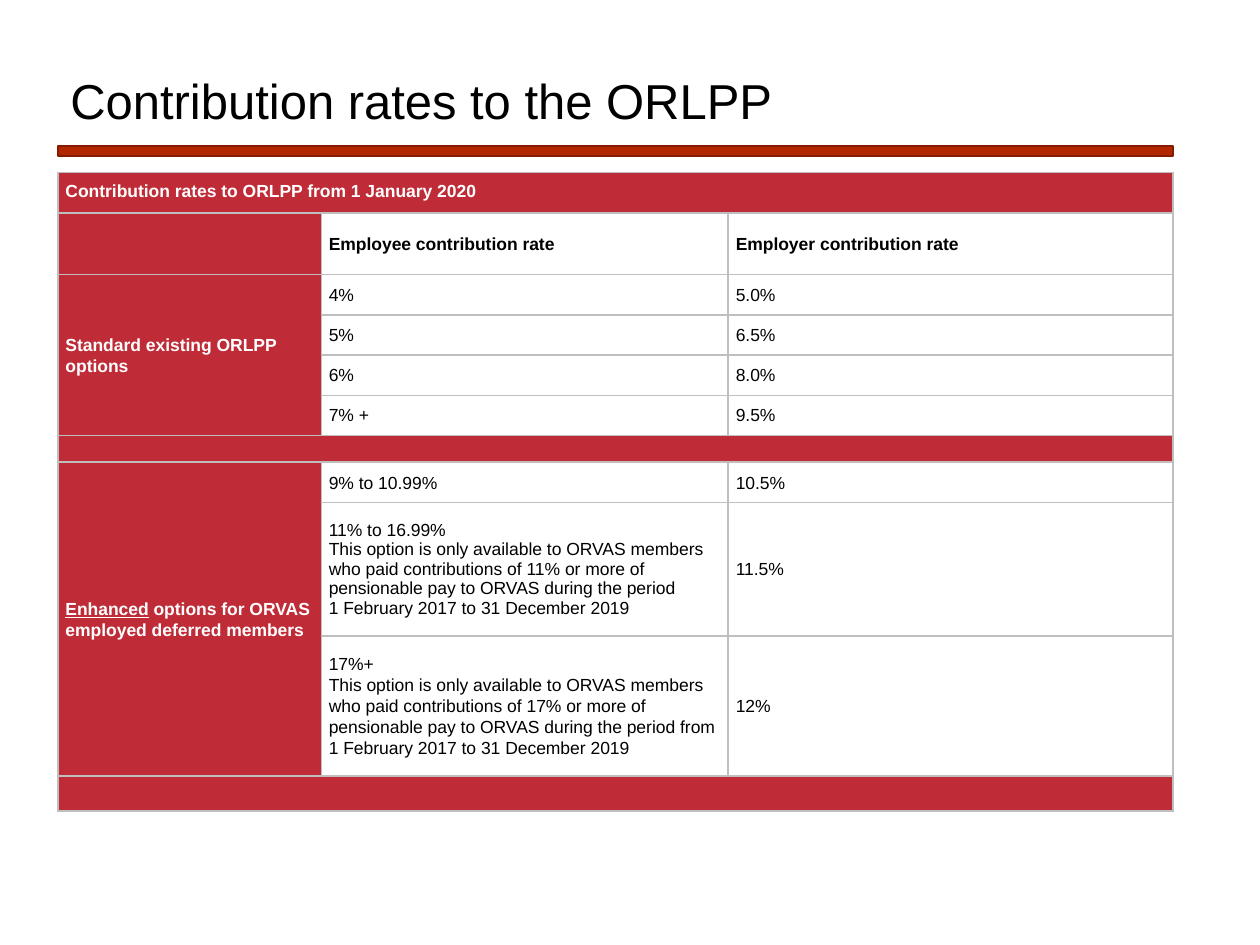
from lxml.etree import SubElement
from pptx import Presentation
from pptx.dml.color import RGBColor
from pptx.enum.shapes import MSO_SHAPE
from pptx.enum.text import MSO_ANCHOR
from pptx.oxml import parse_xml
from pptx.oxml.ns import nsdecls, qn
from pptx.util import Inches, Pt

RED, WHITE, BLACK, GREY = "BF2C37", "FFFFFF", "000000", "BFBFBF"
LEFT, WIDTH = 0.46, 8.85
COLUMNS = [2.09, 3.23, 3.53]
ROWS = [0.32, 0.49] + [0.32] * 4 + [0.21, 0.32, 1.06, 1.11, 0.28]
MERGES = [(0, 0, 0, 2), (2, 0, 5, 0), (6, 0, 6, 2), (7, 0, 9, 0), (10, 0, 10, 2)]
RED_ROWS = (0, 6, 10)
SINGLE_SPACED_ROWS = (3, 4, 5, 8)

HEADINGS = {
    (0, 0): ["Contribution rates to ORLPP from 1 January 2020"],
    (2, 0): ["Standard existing ORLPP options"],
    (7, 0): ["Enhanced", " options for ORVAS employed deferred members"],
}
RATES = {
    1: ("Employee contribution rate", "Employer contribution rate"),
    2: ("4%", "5.0%"),
    3: ("5%", "6.5%"),
    4: ("6%", "8.0%"),
    5: ("7% +", "9.5%"),
    7: ("9% to 10.99%", "10.5%"),
    8: (
        "11% to 16.99%\vThis option is only available to ORVAS members who paid "
        "contributions of 11% or more of pensionable pay to ORVAS during the period\v"
        "1 February 2017 to 31 December 2019",
        "11.5%",
    ),
    9: (
        "17%+\nThis option is only available to ORVAS members who paid "
        "contributions of 17% or more of pensionable pay to ORVAS during the period "
        "from 1 February 2017 to 31 December 2019",
        "12%",
    ),
}


def color(value):
    """Turn a hex string into a colour."""
    return RGBColor.from_string(value)


def add_span(para, text, size, hex_color, bold=False, underline=False):
    """Add one formatted run to a paragraph."""
    span = para.add_run()
    span.text = text
    font = span.font
    font.name, font.size, font.bold = "Arial", Pt(size), bold
    font.underline = underline
    font.color.rgb = color(hex_color)


def add_title(page, text):
    """Add the slide title."""
    box = page.shapes.add_textbox(Inches(LEFT), Inches(0.4), Inches(WIDTH), Inches(0.84))
    frame = box.text_frame
    frame.word_wrap = True
    frame.vertical_anchor = MSO_ANCHOR.MIDDLE
    para = frame.paragraphs[0]
    para.line_spacing = 0.9
    add_span(para, text, 28, BLACK)


def add_rule(page):
    """Add the thick rule under the title."""
    rule = page.shapes.add_shape(
        MSO_SHAPE.RECTANGLE, Inches(LEFT), Inches(1.16), Inches(WIDTH), Inches(0.08))
    rule.shadow.inherit = False
    rule.fill.solid()
    rule.fill.fore_color.rgb = color("B22600")
    rule.line.color.rgb = color("841C00")
    rule.line.width = Pt(1)


def set_borders(cell):
    """Draw a thin grey line on all four sides of a cell."""
    properties = cell._tc.get_or_add_tcPr()
    for index, side in enumerate(("lnL", "lnR", "lnT", "lnB")):
        properties.insert(index, parse_xml(
            f'<a:{side} {nsdecls("a")} w="{Pt(1)}"><a:solidFill>'
            f'<a:srgbClr val="{GREY}"/></a:solidFill></a:{side}>'))


def style_cell(cell, is_red, anchor):
    """Set the margins, anchor, fill and borders of a cell."""
    cell.margin_left = cell.margin_right = Inches(0.06)
    cell.margin_top = cell.margin_bottom = Inches(0.06)
    cell.vertical_anchor = anchor
    if is_red:
        cell.fill.solid()
        cell.fill.fore_color.rgb = color(RED)
    else:
        cell.fill.background()
    set_borders(cell)


def shrink_empty(cell):
    """Keep an empty cell from stretching its row."""
    SubElement(cell.text_frame.paragraphs[0]._p, qn("a:endParaRPr"), sz="400")


def write_heading(cell, texts):
    """Write a white bold heading, underlining the first of several runs."""
    para = cell.text_frame.paragraphs[0]
    para.line_spacing = 1.07
    for index, text in enumerate(texts):
        add_span(para, text, 10, WHITE, True, len(texts) > 1 and index == 0)


def write_rate(cell, text, bold, spacing):
    """Write black text with its paragraphs and line breaks."""
    frame = cell.text_frame
    for index, block in enumerate(text.split("\n")):
        para = frame.add_paragraph() if index else frame.paragraphs[0]
        para.line_spacing = spacing
        for number, line in enumerate(block.split("\v")):
            if number:
                para.add_line_break()
            add_span(para, line, 10, BLACK, bold)


def add_rates_table(page):
    """Add the table of contribution rates."""
    table = page.shapes.add_table(
        len(ROWS), len(COLUMNS), Inches(LEFT), Inches(1.37),
        Inches(WIDTH), Inches(sum(ROWS))).table
    table.first_row = table.horz_banding = False
    for column, width in zip(table.columns, COLUMNS):
        column.width = Inches(width)
    for r, height in enumerate(ROWS):
        table.rows[r].height = Inches(height)
        anchor = MSO_ANCHOR.MIDDLE if r else MSO_ANCHOR.TOP
        spacing = 1.0 if r in SINGLE_SPACED_ROWS else 1.07
        for c in range(len(COLUMNS)):
            cell = table.cell(r, c)
            style_cell(cell, c == 0 or r in RED_ROWS, anchor)
            if (r, c) in HEADINGS:
                write_heading(cell, HEADINGS[r, c])
            elif c and r in RATES:
                write_rate(cell, RATES[r][c - 1], r == 1, spacing)
            else:
                shrink_empty(cell)
    for top, left, bottom, right in MERGES:
        table.cell(top, left).merge(table.cell(bottom, right))


def main():
    """Build and save the slide."""
    deck = Presentation()
    deck.slide_width, deck.slide_height = Inches(10), Inches(7.5)
    page = deck.slides.add_slide(deck.slide_layouts[6])
    add_rule(page)
    add_title(page, "Contribution rates to the ORLPP")
    add_rates_table(page)
    deck.save("out.pptx")


if __name__ == "__main__":
    main()
